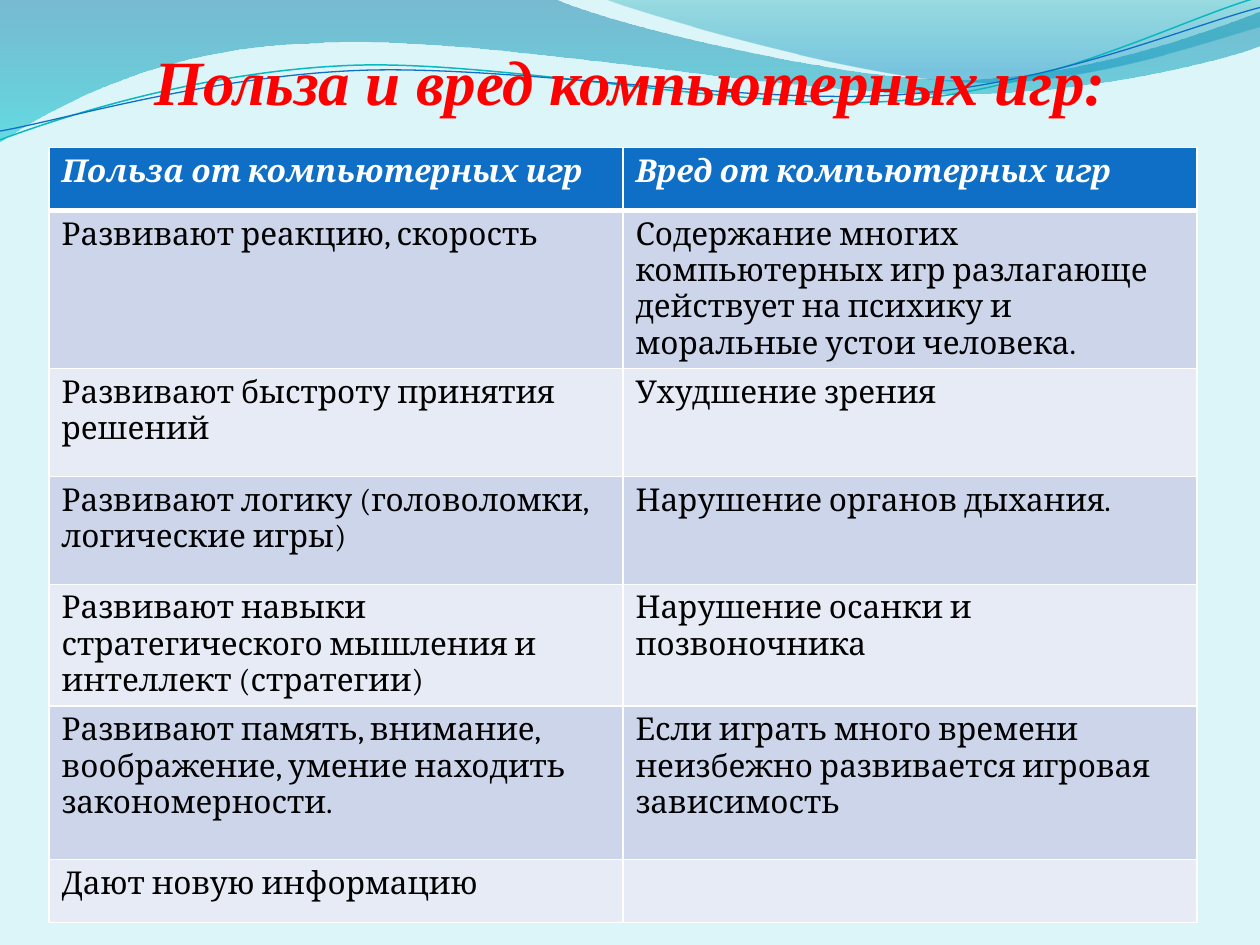
from math import cos, radians, sin

from lxml import etree
from pptx import Presentation
from pptx.dml.color import RGBColor
from pptx.enum import text
from pptx.oxml import parse_xml
from pptx.oxml.ns import nsdecls, qn
from pptx.util import Pt

COLORS = {
    "background": "DBF5F9", "title": "FF0000", "header": "0F6FC6",
    "band_dark": "CCD5EA", "band_light": "E7EBF5",
    "white": "FFFFFF", "black": "000000",
    "teal_line": "0AB8BF", "blue_line": "0F6FC6",
}


def rgb(name):
    return RGBColor.from_string(COLORS[name])


def add_wave(shapes, start, segments, close):
    """Draw lines (1 point) and cubic curves (3 points) as one freeform."""
    fb = shapes.build_freeform(Pt(start[0]), Pt(start[1]))
    fb.add_line_segments([(Pt(x), Pt(y)) for seg in segments for x, y in seg],
                         close=close)
    sp = fb.convert_to_shape()
    sp.shadow.inherit = False
    lines = iter(list(sp._element.iter(qn("a:lnTo"))))
    for seg in segments:
        first = next(lines)
        if len(seg) == 3:
            first.tag = qn("a:cubicBezTo")
            for _ in range(2):
                extra = next(lines)
                first.append(extra[0])
                extra.getparent().remove(extra)
    return sp


prs = Presentation()
prs.slide_width, prs.slide_height = Pt(720), Pt(540)
s = prs.slides.add_slide(prs.slide_layouts[5])
s.background.fill.solid()
s.background.fill.fore_color.rgb = rgb("background")

# Filled waves: start, segments, gradient stops (position, colour, opacity)
bands = [
    ((0, 0), [
        [(316.8, -0.7)],
        [(342.7, 12.2), (478.1, 45.4), (545.8, 45.4)],
        [(614.2, 45.4), (689.8, 18.7), (720, 6.5)],
        [(720.7, 25.9)],
        [(707.8, 31.7), (626.4, 54.7), (537.1, 54)],
        [(447.8, 54), (275, 20.2), (185, 24.5)],
        [(92.9, 25.9), (33.1, 59.8), (-0.7, 81.4)],
        [(0, 0)],
    ], [(0, "0074A1", 45), (100, "00C6CF", 55)]),
    ((344.9, -0.7), [
        [(366.5, 7.9), (491, 44.6), (553.7, 46.8)],
        [(616.3, 49.7), (691.9, 23), (720, 15.1)],
        [(720, 0)],
        [(344.9, -0.7)],
    ], [(0, "00A1A9", 30), (80, "008BBF", 45)]),
]
for start, segments, stops in bands:
    sp = add_wave(s.shapes, start, segments, True)
    sp.line.fill.background()
    gs = "".join(
        f'<a:gs pos="{pos * 1000}"><a:srgbClr val="{color}">'
        f'<a:alpha val="{alpha * 1000}"/></a:srgbClr></a:gs>'
        for pos, color, alpha in stops)
    grad = parse_xml(
        f'<a:gradFill {nsdecls("a")} rotWithShape="1"><a:gsLst>{gs}</a:gsLst>'
        '<a:lin ang="5400000" scaled="0"/></a:gradFill>')
    sp._element.spPr.find(qn("a:custGeom")).addnext(grad)

# Thin waves, tilted about their centres
TILT = -2.7
curves = [
    ((359.3, 41.4), (0, 79.9), [
        [(34.6, 67), (113.8, 41), (199.4, 37.4)],
        [(284.4, 33.8), (427, 64.1), (513.4, 57.6)],
        [(599.8, 51.1), (675.4, 10.8), (718.6, -1.4)],
    ], "teal_line", 0.85),
    ((359.6, 42.5), (0, 74.9), [
        [(33.8, 69.1), (118.1, 43.9), (203.8, 40.3)],
        [(290.2, 36.7), (429.8, 60.5), (516.2, 54)],
        [(601.9, 48.2), (678.2, 15.1), (720, 4.3)],
    ], "blue_line", 0.75),
]
c, n = cos(radians(-TILT)), sin(radians(-TILT))
group = s.shapes.add_group_shape()
for (cx, cy), start, segments, color, width in curves:
    (level_start,), *level = [
        [(cx + (x - cx) * c - (y - cy) * n, cy + (x - cx) * n + (y - cy) * c)
         for x, y in seg] for seg in [[start], *segments]]
    sp = add_wave(group.shapes, level_start, level, False)
    sp.rotation = TILT
    sp.fill.background()
    sp.line.color.rgb = rgb(color)
    sp.line.width = Pt(width)

# Title, brought in front of the waves
title = s.shapes.title
s.shapes._spTree.append(title._element)
title.left, title.top, title.width, title.height = Pt(36), Pt(17), Pt(648), Pt(50.4)
tf = title.text_frame
tf.auto_size = text.MSO_AUTO_SIZE.NONE
tf.word_wrap = True
tf.vertical_anchor = text.MSO_ANCHOR.BOTTOM
tf.margin_left = tf.margin_right = tf.margin_bottom = 0
tf.margin_top = Pt(3.6)
p = tf.paragraphs[0]
p.alignment = text.PP_ALIGN.CENTER
r = p.add_run()
r.text = "Польза и вред компьютерных игр:"
r.font.name, r.font.size = "Times New Roman", Pt(36)
r.font.bold = r.font.italic = True
r.font.color.rgb = rgb("title")

# Table of benefits and harms
rows = [
    (36, "Польза от компьютерных игр", "Вред от компьютерных игр"),
    (87.8, "Развивают реакцию, скорость",
     "Содержание многих компьютерных игр разлагающе действует на психику "
     "и моральные устои человека."),
    (61.7, "Развивают быстроту принятия решений", "Ухудшение зрения"),
    (61.7, "Развивают логику (головоломки, логические игры)",
     "Нарушение органов дыхания."),
    (61.7, "Развивают навыки стратегического мышления и интеллект (стратегии)",
     "Нарушение осанки и позвоночника"),
    (87.8, "Развивают память, внимание, воображение, умение находить закономерности.",
     "Если играть много времени неизбежно развивается игровая зависимость"),
    (36, "Дают новую информацию", ""),
]
table = s.shapes.add_table(len(rows), 2, Pt(28), Pt(84.2), Pt(656), Pt(433)).table
for i, (height, *texts) in enumerate(rows):
    table.rows[i].height = Pt(height)
    is_header = i == 0
    fill = "header" if is_header else "band_dark" if i % 2 else "band_light"
    for j, words in enumerate(texts):
        cell = table.cell(i, j)
        if words:
            r = cell.text_frame.paragraphs[0].add_run()
            r.text = words
            r.font.name, r.font.size = "Cambria", Pt(18)
            r.font.bold = r.font.italic = is_header
            r.font.color.rgb = rgb("white" if is_header else "black")
        tc_pr = cell._tc.get_or_add_tcPr()
        for side in ("lnL", "lnR", "lnT", "lnB"):
            thick = (is_header and side == "lnB") or (i == 1 and side == "lnT")
            ln = etree.SubElement(tc_pr, qn(f"a:{side}"), w=str(Pt(3 if thick else 1)))
            solid = etree.SubElement(ln, qn("a:solidFill"))
            etree.SubElement(solid, qn("a:srgbClr"), val=COLORS["white"])
        cell.fill.solid()
        cell.fill.fore_color.rgb = rgb(fill)

prs.save("out.pptx")
